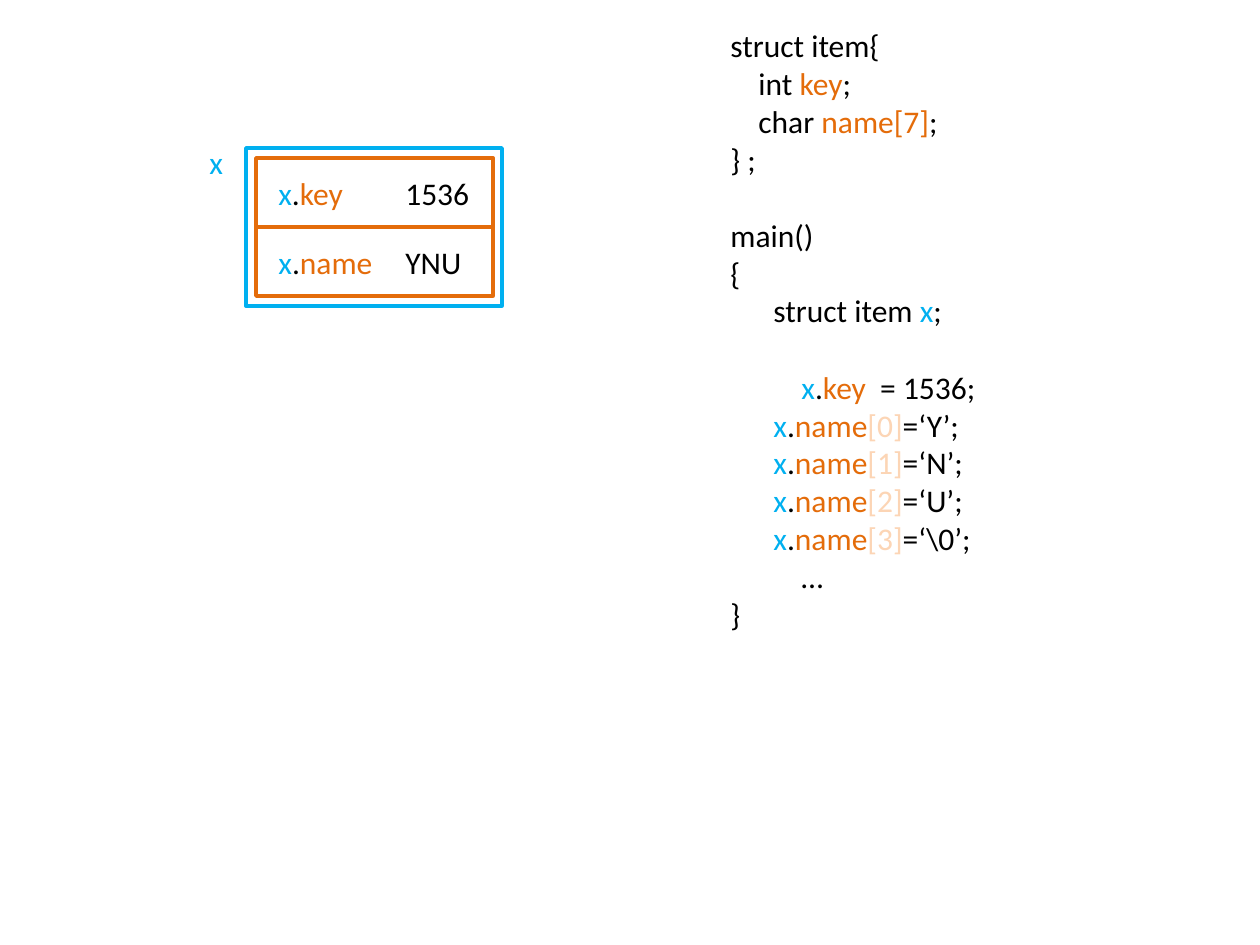
from pptx import Presentation
from pptx.dml.color import RGBColor
from pptx.enum.shapes import MSO_SHAPE
from pptx.enum.text import MSO_AUTO_SIZE
from pptx.util import Emu, Pt

SCALE = 914400 / 126  # EMU per px
COLORS = {"black": "000000", "blue": "00B0F0", "orange": "E46C0A", "peach": "FCD5B5"}


def px(*lengths):
    return [Emu(round(length * SCALE)) for length in lengths]


def add_text(lines, *, box, size=18, font="Calibri"):
    """Each line is (indent px, blank lines before, [(text, color), ...])."""
    shape = slide.shapes.add_textbox(*px(*box))
    frame = shape.text_frame
    frame.word_wrap = False
    frame.auto_size = MSO_AUTO_SIZE.SHAPE_TO_FIT_TEXT
    for number, (indent, gap, runs) in enumerate(lines):
        paragraph = frame.add_paragraph() if number else frame.paragraphs[0]
        if indent:
            paragraph._p.get_or_add_pPr().set("marL", str(px(indent)[0]))
        paragraph.space_before = Pt(22 * gap)
        for text, color in runs:
            run = paragraph.add_run()
            run.text = text
            run.font.size = Pt(size)
            run.font.name = font
            run.font.color.rgb = RGBColor.from_string(COLORS[color])


presentation = Presentation()
presentation.slide_width, presentation.slide_height = px(1260, 945)
slide = presentation.slides.add_slide(presentation.slide_layouts[6])

# Struct frame: two member rows inside the variable's box
ROW_TOP, ROW_HEIGHT = 158, 69
frames = [
    ((256, ROW_TOP, 237, ROW_HEIGHT), "orange"),
    ((256, ROW_TOP + ROW_HEIGHT, 237, ROW_HEIGHT), "orange"),
    ((246, 148, 256, 158), "blue"),
]
for box, color in frames:
    shape = slide.shapes.add_shape(MSO_SHAPE.RECTANGLE, *px(*box))
    shape.shadow.inherit = False
    shape.fill.background()
    shape.line.color.rgb = RGBColor.from_string(COLORS[color])
    shape.line.width = Pt(2)

# Code listing
variable = [("x", "blue"), (".", "black")]
code = [
    (0, 0, [("struct item{", "black")]),
    (28, 0, [("int ", "black"), ("key", "orange"), (";", "black")]),
    (28, 0, [("char ", "black"), ("name[7]", "orange"), (";", "black")]),
    (0, 0, [("} ;", "black")]),
    (0, 1, [("main()", "black")]),
    (0, 0, [("{", "black")]),
    (43, 0, [("struct item ", "black"), ("x", "blue"), (";", "black")]),
    (71, 1, variable + [("key", "orange"), ("  = 1536;", "black")]),
]
for index, letter in enumerate(["Y", "N", "U", "\\0"]):
    member = [("name", "orange"), (f"[{index}]", "peach"), (f"=‘{letter}’;", "black")]
    code.append((43, 0, variable + member))
code += [(71, 0, [("…", "black")]), (0, 0, [("}", "black")])]
add_text(code, box=(718, 20, 272, 624))

# Variable name, then member names and values
add_text([(0, 0, [("x", "blue")])], box=(197, 137, 39, 50))
members = [("key", 91, "1536", 89), ("name", 121, "YNU", 82)]
for row, (name, name_width, value, value_width) in enumerate(members):
    top = ROW_TOP + 10 + row * ROW_HEIGHT
    add_text([(0, 0, variable + [(name, "orange")])], box=(266, top, name_width, 50))
    add_text([(0, 0, [(value, "black")])], box=(393, top, value_width, 50))

presentation.save("out.pptx")
